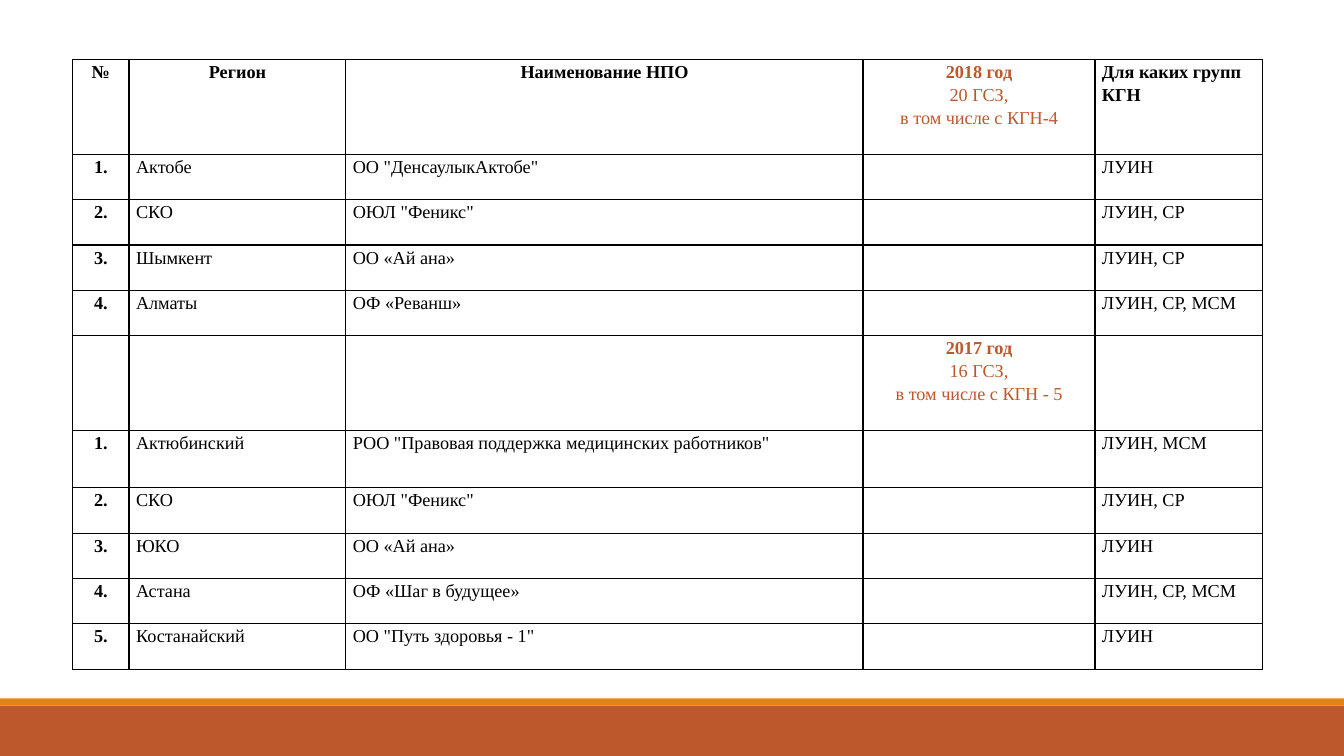
import pptx
import pptx.util
import pptx.oxml
import pptx.dml.color
import pptx.enum.shapes
import pptx.enum.text

Inches = pptx.util.Inches
ALIGN = pptx.enum.text.PP_ALIGN
NS = "http://schemas.openxmlformats.org/drawingml/2006/main"

HEADS = ["№", "Регион", "Наименование НПО",
         "2018 год\n20 ГСЗ,\nв том числе с КГН-4", "Для каких групп КГН"]
SPLIT = ["", "", "", "2017 год\n16 ГСЗ,\nв том числе с КГН - 5", ""]
NEW = [
    ("Актобе", 'ОО "ДенсаулыкАктобе"', "ЛУИН"),
    ("СКО", 'ОЮЛ "Феникс"', "ЛУИН, СР"),
    ("Шымкент", "ОО «Ай ана»", "ЛУИН, СР"),
    ("Алматы", "ОФ «Реванш»", "ЛУИН, СР, МСМ"),
]
OLD = [
    ("Актюбинский", 'РОО "Правовая поддержка медицинских работников"', "ЛУИН, МСМ"),
    ("СКО", 'ОЮЛ "Феникс"', "ЛУИН, СР"),
    ("ЮКО", "ОО «Ай ана»", "ЛУИН"),
    ("Астана", "ОФ «Шаг в будущее»", "ЛУИН, СР, МСМ"),
    ("Костанайский", 'ОО "Путь здоровья - 1"', "ЛУИН"),
]
WIDTHS = [0.56, 2.15, 5.13, 2.3, 1.66]
HEIGHTS = [0.94] + [0.45] * 4 + [0.94, 0.57] + [0.45] * 4
YEAR = 3


def color(code):
    return pptx.dml.color.RGBColor.from_string(code)


def count(rows):
    """Number the rows and leave their year column empty."""
    return [[f"{n}.", area, name, "", group]
            for n, (area, name, group) in enumerate(rows, 1)]


class Page:
    font = "Times New Roman"
    size = 13
    ink = "000000"
    rust = "BD582C"
    gold = "E48312"

    def __init__(self, deck):
        self.slide = deck.slides.add_slide(deck.slide_layouts[6])

    def band(self, top, height, fill):
        shape = self.slide.shapes.add_shape(
            pptx.enum.shapes.MSO_SHAPE.RECTANGLE,
            Inches(0), Inches(top), Inches(13.33), Inches(height))
        shape.shadow.inherit = False
        shape.fill.solid()
        shape.fill.fore_color.rgb = color(fill)
        shape.line.fill.background()

    def border(self, cell):
        props = cell._tc.get_or_add_tcPr()
        for spot, side in enumerate(("lnL", "lnR", "lnT", "lnB")):
            props.insert(spot, pptx.oxml.parse_xml(
                f'<a:{side} xmlns:a="{NS}" w="12700"><a:solidFill>'
                f'<a:srgbClr val="{self.ink}"/></a:solidFill></a:{side}>'))

    def cell(self, cell, text, align, tint, bold):
        """Fill one cell; bold tells how many of its first lines are bold."""
        cell.margin_left = cell.margin_right = Inches(0.07)
        cell.margin_top = cell.margin_bottom = Inches(0)
        cell.fill.background()
        self.border(cell)
        cell.text_frame.text = text
        for n, para in enumerate(cell.text_frame.paragraphs):
            para.alignment = align
            para.line_spacing = 1.15
            for run in para.runs:
                run.font.name = self.font
                run.font.size = pptx.util.Pt(self.size)
                run.font.bold = n < bold
                run.font.color.rgb = color(tint)

    def table(self, left, top, rows):
        table = self.slide.shapes.add_table(
            len(rows), len(WIDTHS), Inches(left), Inches(top),
            Inches(sum(WIDTHS)), Inches(sum(HEIGHTS))).table
        table.first_row = table.horz_banding = False
        for col, width in zip(table.columns, WIDTHS):
            col.width = Inches(width)
        for row, height in zip(table.rows, HEIGHTS):
            row.height = Inches(height)
        body = [ALIGN.CENTER, ALIGN.JUSTIFY, ALIGN.JUSTIFY, ALIGN.CENTER, ALIGN.LEFT]
        for r, row in enumerate(rows):
            for c, text in enumerate(row):
                head = r == 0
                align = ALIGN.CENTER if head and c < 4 else body[c]
                tint = self.rust if c == YEAR else self.ink
                bold = 1 if head or c in (0, YEAR) else 0
                self.cell(table.cell(r, c), text, align, tint, bold)


def main():
    deck = pptx.Presentation()
    deck.slide_width = Inches(13.33)
    deck.slide_height = Inches(7.5)
    page = Page(deck)
    page.band(7, 0.5, page.rust)
    page.band(6.93, 0.07, page.gold)
    page.table(0.72, 0.59, [HEADS] + count(NEW) + [SPLIT] + count(OLD))
    deck.save("out.pptx")


if __name__ == "__main__":
    main()
